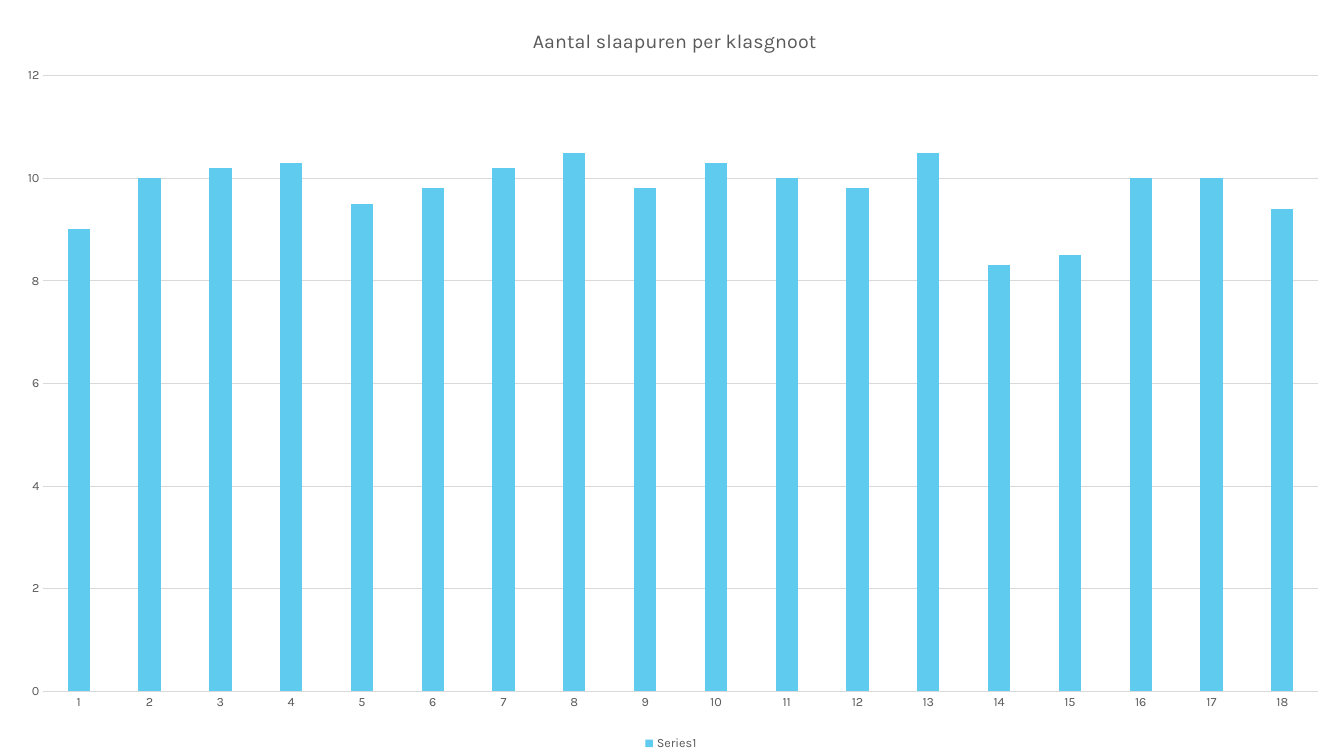
from dataclasses import dataclass

from lxml import etree
from pptx import Presentation
from pptx import util as u
from pptx.chart.data import CategoryChartData
from pptx.dml.color import RGBColor
from pptx.enum import chart as charts


@dataclass(frozen=True)
class Theme:
    font: str = "Karla"
    text: RGBColor = RGBColor(0x59, 0x59, 0x59)
    grid: RGBColor = RGBColor(0xD9, 0xD9, 0xD9)
    bar: RGBColor = RGBColor(0x5F, 0xCB, 0xEF)
    title_size: float = 14
    label_size: float = 9
    line_width: float = 0.75


@dataclass(frozen=True)
class Placement:
    """Position and size in inches; without a size the part fits its content."""
    left: float
    top: float
    width: float = 0
    height: float = 0


THEME = Theme()
SLIDE_WIDTH, SLIDE_HEIGHT = 13.33, 7.5
TITLE = "Aantal slaapuren per klasgnoot"
SLEEP_HOURS = (9, 10, 10.2, 10.3, 9.5, 9.8, 10.2, 10.5, 9.8,
               10.3, 10, 9.8, 10.5, 8.3, 8.5, 10, 10, 9.4)
TITLE_PLACE = Placement(5.25, 0.25)
PLOT_PLACE = Placement(0.43, 0.75, 12.64, 6.11)
LEGEND_PLACE = Placement(6.36, 7.28)


def style_font(font, size: float) -> None:
    font.name = THEME.font
    font.size = u.Pt(size)
    font.bold = False
    font.color.rgb = THEME.text


def style_line(line) -> None:
    line.color.rgb = THEME.grid
    line.width = u.Pt(THEME.line_width)


def place(part, position: Placement, before: tuple, inner: bool = False) -> None:
    """Give a chart part a manual layout, set ahead of the named elements."""
    namespace = part.nsmap["c"]

    def tag(name: str) -> str:
        return f"{{{namespace}}}{name}"

    for old_layout in part.findall(tag("layout")):
        part.remove(old_layout)
    layout = etree.Element(tag("layout"))
    manual = etree.SubElement(layout, tag("manualLayout"))
    settings = [("layoutTarget", "inner")] if inner else []
    settings += [("xMode", "edge"), ("yMode", "edge"),
                 ("x", position.left / SLIDE_WIDTH),
                 ("y", position.top / SLIDE_HEIGHT)]
    if position.width:
        settings += [("w", position.width / SLIDE_WIDTH),
                     ("h", position.height / SLIDE_HEIGHT)]
    for name, value in settings:
        text = value if isinstance(value, str) else f"{value:.4f}"
        etree.SubElement(manual, tag(name)).set("val", text)
    followers = {tag(name) for name in before}
    index = next((i for i, child in enumerate(part) if child.tag in followers), len(part))
    part.insert(index, layout)


def add_sleep_chart(slide):
    data = CategoryChartData()
    data.categories = [str(number) for number in range(1, len(SLEEP_HOURS) + 1)]
    data.add_series("Series1", SLEEP_HOURS)
    frame = slide.shapes.add_chart(
        charts.XL_CHART_TYPE.COLUMN_CLUSTERED, 0, 0,
        u.Inches(SLIDE_WIDTH), u.Inches(SLIDE_HEIGHT), data)
    return frame.chart


def style_axes(chart) -> None:
    for axis in (chart.category_axis, chart.value_axis):
        axis.major_tick_mark = axis.minor_tick_mark = charts.XL_TICK_MARK.NONE
        style_font(axis.tick_labels.font, THEME.label_size)
    style_line(chart.category_axis.format.line)
    hours = chart.value_axis
    hours.minimum_scale, hours.maximum_scale, hours.major_unit = 0, 12, 2
    hours.format.line.fill.background()
    style_line(hours.major_gridlines.format.line)


def main() -> None:
    presentation = Presentation()
    presentation.slide_width = u.Inches(SLIDE_WIDTH)
    presentation.slide_height = u.Inches(SLIDE_HEIGHT)
    slide = presentation.slides.add_slide(presentation.slide_layouts[6])
    chart = add_sleep_chart(slide)
    style_font(chart.font, THEME.label_size)

    # Title
    title = chart.chart_title
    title.text_frame.text = TITLE
    style_font(title.text_frame.paragraphs[0].runs[0].font, THEME.title_size)
    title.include_in_layout = False

    # Axes and bars
    style_axes(chart)
    plot = chart.plots[0]
    plot.gap_width, plot.overlap = 219, -27
    plot.vary_by_categories = False
    bars = plot.series[0].format
    bars.fill.solid()
    bars.fill.fore_color.rgb = THEME.bar
    bars.line.fill.background()

    # Legend
    chart.has_legend = True
    legend = chart.legend
    legend.position = charts.XL_LEGEND_POSITION.BOTTOM
    legend.include_in_layout = False
    style_font(legend.font, THEME.label_size)

    # Positions inside the chart
    plot_area = chart.element.chart.plotArea
    place(title.element, TITLE_PLACE, ("overlay", "spPr", "txPr"))
    place(plot_area, PLOT_PLACE, ("barChart",), inner=True)
    place(chart.element.chart.legend, LEGEND_PLACE, ("overlay", "spPr", "txPr"))

    presentation.save("out.pptx")


if __name__ == "__main__":
    main()
